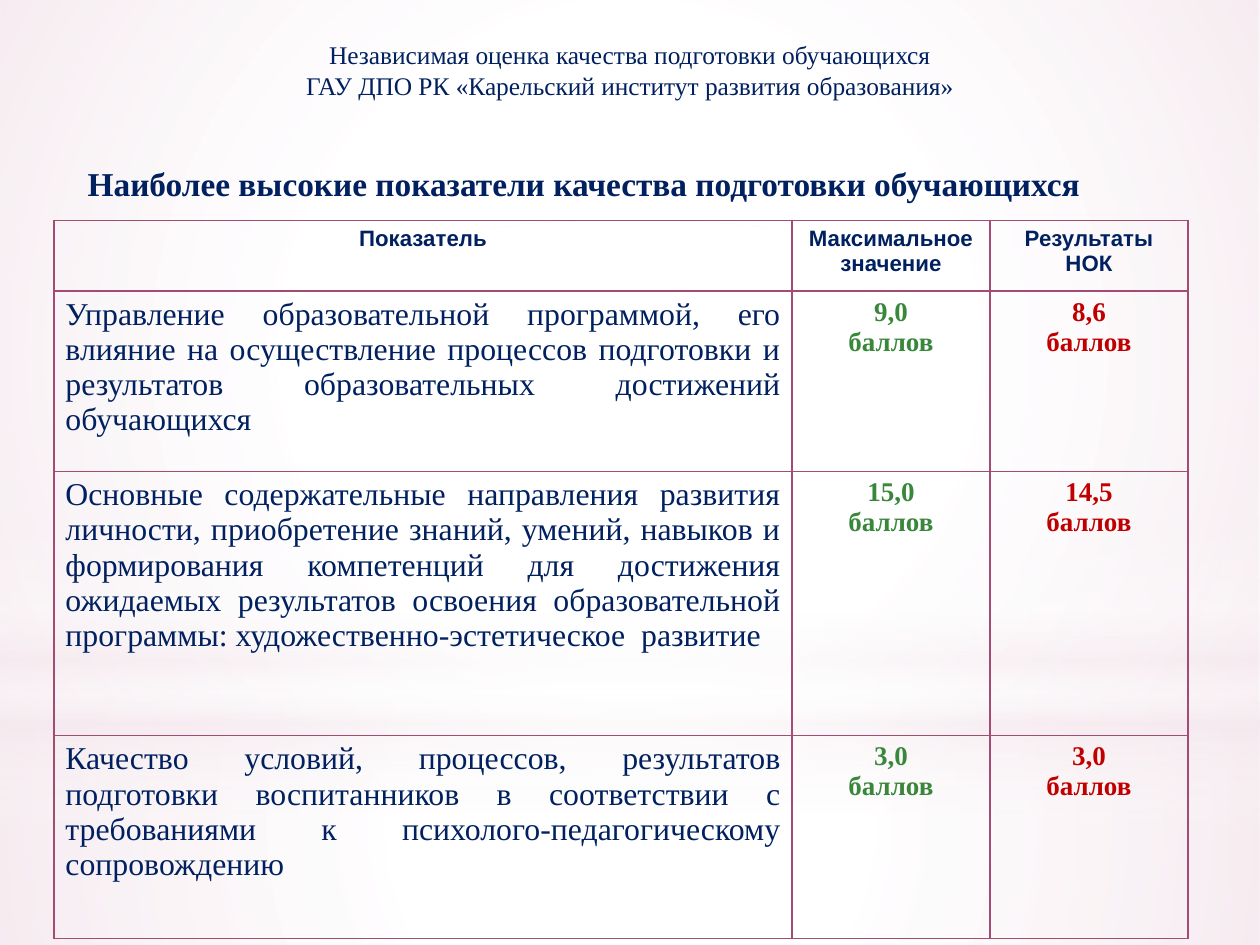
from lxml import etree
from pptx import Presentation
from pptx.dml.color import RGBColor
from pptx.enum.shapes import MSO_SHAPE
from pptx.enum.text import PP_ALIGN
from pptx.oxml import parse_xml
from pptx.util import Cm, Pt

RECTANGLE, OVAL = MSO_SHAPE.RECTANGLE, MSO_SHAPE.OVAL
CENTER, JUSTIFY, LEFT = PP_ALIGN.CENTER, PP_ALIGN.JUSTIFY, PP_ALIGN.LEFT
DRAWING_NS = "http://schemas.openxmlformats.org/drawingml/2006/main"
SERIF, SANS = "Times New Roman", "Arial"
NAVY, GREEN, RED = "002060", "39873B", "C00000"
WHITE, PINK, BORDER = "FFFFFF", "F4E7ED", "A34B73"
RADIAL = ('<a:path path="circle"><a:fillToRect l="50000" t="50000" '
          'r="50000" b="50000"/></a:path>')
VERTICAL = '<a:lin ang="5400000" scaled="0"/>'


def write(frame, lines, align, font, size, color, bold):
    """Fill a text frame with one paragraph per line, all in one format."""
    frame.word_wrap = True
    for number, line in enumerate(lines):
        para = frame.add_paragraph() if number else frame.paragraphs[0]
        para.text = line
        para.alignment = align
        para.font.name = font
        para.font.size = Pt(size)
        para.font.bold = bold
        para.font.color.rgb = RGBColor.from_string(color)


deck = Presentation()
deck.slide_width, deck.slide_height = Cm(28), Cm(21)
page = deck.slides.add_slide(deck.slide_layouts[6])

# Background glow: shape, top, height, direction, stops (position, colour, opacity)
glows = [
    (RECTANGLE, 15.62, 5.38, RADIAL,
     [(0, WHITE, 91), (37, WHITE, 76), (100, PINK, 79)]),
    (RECTANGLE, 0, 15.62, RADIAL,
     [(0, WHITE, 89), (48, WHITE, 62), (100, PINK, 79)]),
    (RECTANGLE, 11.53, 7, VERTICAL,
     [(0, WHITE, 0), (29, WHITE, 30), (45, PINK, 40),
      (55, WHITE, 26), (65, PINK, 60), (100, WHITE, 0)]),
    (OVAL, 4.9, 15.62, RADIAL, [(0, WHITE, 100), (56, WHITE, 0)]),
]
for kind, top, height, direction, stops in glows:
    glow = page.shapes.add_shape(kind, 0, Cm(top), Cm(28), Cm(height))
    glow.shadow.inherit = False
    glow.line.fill.background()
    glow.fill.background()
    stop_xml = "".join(
        f'<a:gs pos="{position * 1000}"><a:srgbClr val="{color}">'
        f'<a:alpha val="{opacity * 1000}"/></a:srgbClr></a:gs>'
        for position, color, opacity in stops)
    gradient = parse_xml(
        f'<a:gradFill xmlns:a="{DRAWING_NS}" rotWithShape="1">'
        f'<a:gsLst>{stop_xml}</a:gsLst>{direction}</a:gradFill>')
    properties = glow.element.spPr
    properties.replace(properties.find(f"{{{DRAWING_NS}}}noFill"), gradient)

title = page.shapes.add_textbox(Cm(1.4), Cm(0.75), Cm(25.2), Cm(1.7))
write(title.text_frame,
      ["Независимая оценка качества подготовки обучающихся",
       "ГАУ ДПО РК «Карельский институт развития образования»"],
      CENTER, SERIF, 16, NAVY, False)

heading = page.shapes.add_textbox(Cm(1.7), Cm(3.5), Cm(24.6), Cm(1.15))
write(heading.text_frame,
      ["Наиболее высокие показатели качества подготовки обучающихся"],
      LEFT, SERIF, 21, NAVY, True)

headers = ["Показатель", "Максимальное значение", "Результаты НОК"]
indicators = [
    ("Управление образовательной программой, его влияние на осуществление "
     "процессов подготовки и результатов образовательных достижений "
     "обучающихся", "9,0", "8,6"),
    ("Основные содержательные направления развития личности, приобретение "
     "знаний, умений, навыков и формирования компетенций для достижения "
     "ожидаемых результатов освоения образовательной программы: "
     "художественно-эстетическое  развитие", "15,0", "14,5"),
    ("Качество условий, процессов, результатов подготовки воспитанников в "
     "соответствии с требованиями к психолого-педагогическому "
     "сопровождению", "3,0", "3,0"),
]
column_widths = [16.4, 4.4, 4.4]
row_heights = [1.57, 4.01, 5.87, 4.5]
table = page.shapes.add_table(
    len(row_heights), len(column_widths), Cm(1.2), Cm(4.9),
    Cm(sum(column_widths)), Cm(sum(row_heights))).table
table.first_row = table.horz_banding = False
for column, width in zip(table.columns, column_widths):
    column.width = Cm(width)
for row, height in zip(table.rows, row_heights):
    row.height = Cm(height)

for column, header in enumerate(headers):
    write(table.cell(0, column).text_frame, [header], CENTER, SANS, 14, NAVY, True)
for row, (indicator, maximum, result) in enumerate(indicators, start=1):
    write(table.cell(row, 0).text_frame, [indicator], JUSTIFY, SERIF, 20, NAVY, False)
    for column, score, color in [(1, maximum, GREEN), (2, result, RED)]:
        write(table.cell(row, column).text_frame, [score, "баллов"],
              CENTER, SERIF, 17, color, True)

for cell in table.iter_cells():
    cell_properties = cell._tc.get_or_add_tcPr()
    for side in ["lnL", "lnR", "lnT", "lnB"]:
        line = etree.SubElement(cell_properties, f"{{{DRAWING_NS}}}{side}",
                                w=str(Pt(1)))
        fill = etree.SubElement(line, f"{{{DRAWING_NS}}}solidFill")
        etree.SubElement(fill, f"{{{DRAWING_NS}}}srgbClr", val=BORDER)
    cell.fill.background()

deck.save("out.pptx")
